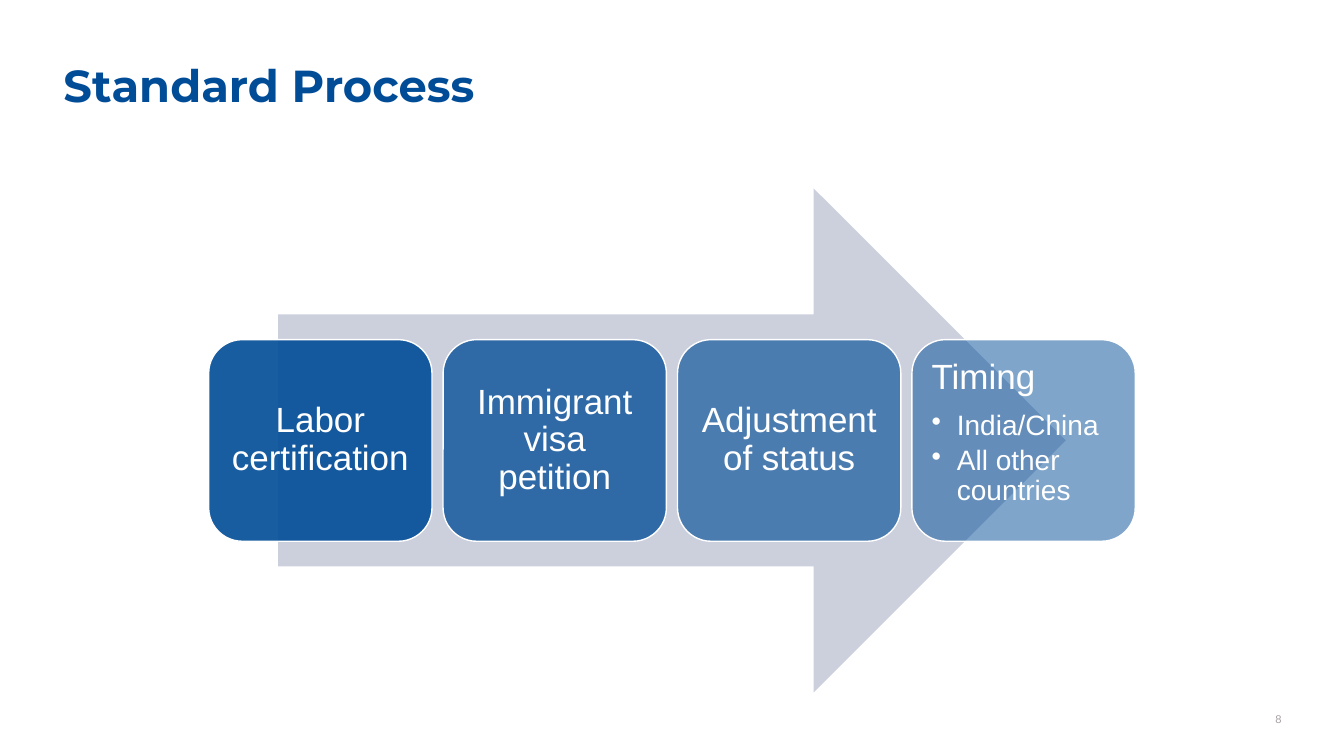
from lxml import etree
from pptx import Presentation
from pptx import util as u
from pptx.dml.color import RGBColor
from pptx.enum import shapes, text
from pptx.oxml.ns import qn

COLORS = {"blue": "004C97", "arrow": "CCD0DD", "white": "FFFFFF", "grey": "A8A2A2"}
STEPS = [
    ("Labor certification", 90),
    ("Immigrant visa petition", 77),
    ("Adjustment of status", 63),
    ("Timing", 50),
]
TIMING_ITEMS = ["India/China", "All other countries"]
STEP_GAP = 0.11


def place(box):
    """Convert a box in inches to slide lengths."""
    return [u.Inches(length) for length in box]


def format_paragraph(paragraph, size, color, font="Arial", bold=False):
    """Set the font of every run in a paragraph."""
    for run in paragraph.runs:
        run.font.name = font
        run.font.size = u.Pt(size)
        run.font.bold = bold
        run.font.color.rgb = RGBColor.from_string(COLORS[color])


def set_margins(frame, margin):
    """Wrap the text and give it equal margins in inches."""
    frame.word_wrap = True
    frame.margin_left = frame.margin_right = u.Inches(margin)
    frame.margin_top = frame.margin_bottom = u.Inches(margin)


def add_filled_shape(slide, kind, box, color):
    """Add a preset shape with a solid fill and no outline."""
    shape = slide.shapes.add_shape(kind, *place(box))
    shape.shadow.inherit = False
    shape.fill.solid()
    shape.fill.fore_color.rgb = RGBColor.from_string(COLORS[color])
    shape.line.fill.background()
    return shape


def add_label(slide, box, wording):
    """Add a text box without margins and return its paragraph."""
    frame = slide.shapes.add_textbox(*place(box)).text_frame
    set_margins(frame, 0)
    frame.text = wording
    return frame.paragraphs[0]


def add_title(slide, box, wording):
    """Add the slide title."""
    paragraph = add_label(slide, box, wording)
    paragraph.line_spacing = 0.9
    format_paragraph(paragraph, 32, "blue", "Montserrat", True)


def add_page_number(slide, box, number):
    """Add the page number, aligned right."""
    paragraph = add_label(slide, box, number)
    paragraph.alignment = text.PP_ALIGN.RIGHT
    format_paragraph(paragraph, 8, "grey")


def add_step(slide, box, wording, opacity):
    """Add a translucent rounded card with a centred label."""
    card = add_filled_shape(slide, shapes.MSO_SHAPE.ROUNDED_RECTANGLE, box, "blue")
    color = card.fill._xPr.find(qn("a:solidFill"))[0]
    etree.SubElement(color, qn("a:alpha"), val=str(opacity * 1000))
    card.line.color.rgb = RGBColor.from_string(COLORS["white"])
    card.line.width = u.Pt(1)
    frame = card.text_frame
    set_margins(frame, 0.1)
    frame.vertical_anchor = text.MSO_ANCHOR.MIDDLE
    frame.text = wording
    paragraph = frame.paragraphs[0]
    paragraph.alignment = text.PP_ALIGN.CENTER
    paragraph.line_spacing = 0.9
    format_paragraph(paragraph, 25, "white")
    return frame


def add_bullets(frame, items):
    """Move the card's label to the top left and list items under it."""
    frame.vertical_anchor = text.MSO_ANCHOR.TOP
    frame.paragraphs[0].alignment = text.PP_ALIGN.LEFT
    frame.paragraphs[0].space_after = u.Pt(10)
    for item in items:
        paragraph = frame.add_paragraph()
        paragraph.text = item
        paragraph.level = 1
        paragraph.alignment = text.PP_ALIGN.LEFT
        paragraph.line_spacing = 0.9
        paragraph.space_after = u.Pt(3.5)
        format_paragraph(paragraph, 20, "white")
        properties = paragraph._p.get_or_add_pPr()
        properties.set("marL", str(u.Inches(0.25)))
        properties.set("indent", str(u.Inches(-0.25)))
        etree.SubElement(properties, qn("a:buChar"), char="•")


def add_process(slide, box):
    """Add the arrow and a row of equal cards across its middle."""
    left, top, width, height = box
    arrow_width = width * 0.85
    arrow_box = (left + (width - arrow_width) / 2, top, arrow_width, height)
    add_filled_shape(slide, shapes.MSO_SHAPE.RIGHT_ARROW, arrow_box, "arrow")
    card_width = (width - STEP_GAP * (len(STEPS) - 1)) / len(STEPS)
    for column, (wording, opacity) in enumerate(STEPS):
        card_left = left + column * (card_width + STEP_GAP)
        card_box = (card_left, top + height * 0.3, card_width, height * 0.4)
        frame = add_step(slide, card_box, wording, opacity)
    add_bullets(frame, TIMING_ITEMS)


def main():
    """Build and save the slide."""
    presentation = Presentation()
    presentation.slide_width = u.Inches(13.33)
    presentation.slide_height = u.Inches(7.5)
    slide = presentation.slides.add_slide(presentation.slide_layouts[6])
    add_process(slide, (2.07, 1.87, 9.19, 5))
    add_title(slide, (0.63, 0.63, 12.07, 0.5), "Standard Process")
    add_page_number(slide, (11.99, 7.07, 0.72, 0.2), "8")
    presentation.save("out.pptx")


if __name__ == "__main__":
    main()
